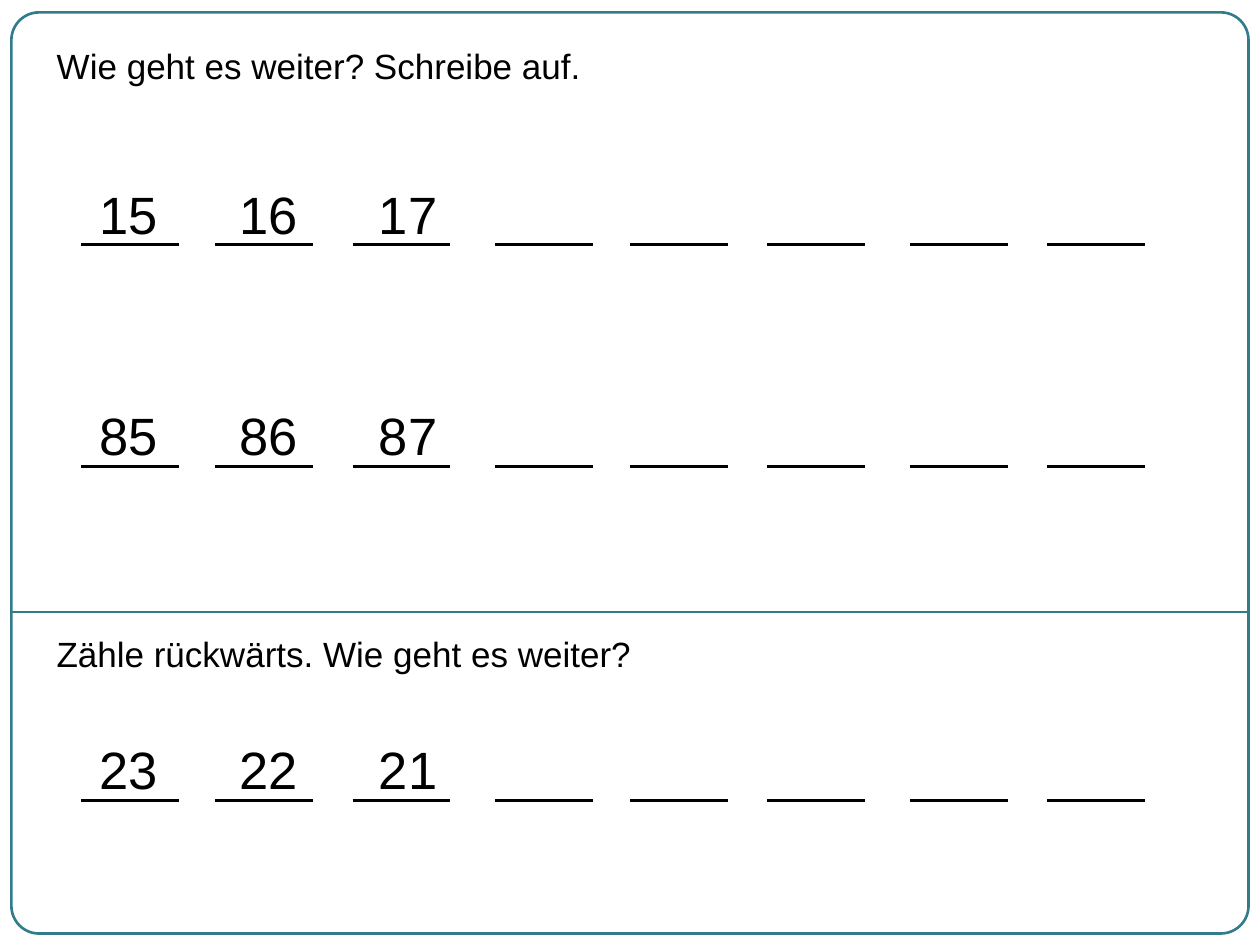
from collections import namedtuple

from pptx import Presentation, util as u
from pptx.dml.color import RGBColor
from pptx.enum import shapes, text
from pptx.oxml.ns import qn
from lxml import etree

TEAL = RGBColor(0x32, 0x7B, 0x8A)
BLACK = RGBColor(0, 0, 0)

# Lengths in centimetres
Box = namedtuple("Box", "left top width height")
FRAME = Box(0.23, 0.25, 24.94, 18.57)
DIVIDER_TOP = 12.34
BLANK_LEFTS = (1.4, 4.11, 6.88, 9.75, 12.47, 15.24, 18.11, 20.88)
BLANK_WIDTH = 1.97
NUMBER_LEFT, NUMBER_STEP, NUMBER_RISE = 1.52, 2.82, 1.39


def place(shape, box):
    for name, value in box._asdict().items():
        setattr(shape, name, u.Cm(value))


def write(shape, words, size):
    frame = shape.text_frame
    layout = {"word_wrap": True, "vertical_anchor": text.MSO_ANCHOR.TOP,
              "auto_size": text.MSO_AUTO_SIZE.SHAPE_TO_FIT_TEXT}
    for name, value in layout.items():
        setattr(frame, name, value)
    para = frame.paragraphs[0]
    para.alignment = text.PP_ALIGN.LEFT
    span = para.add_run()
    span.text = words
    for name, value in {"name": "Arial", "size": u.Pt(size)}.items():
        setattr(span.font, name, value)
    span.font.color.rgb = BLACK


def add_words(page, box, words, size):
    shape = page.shapes.add_textbox(0, 0, 0, 0)
    place(shape, box)
    write(shape, words, size)


def add_rule(page, left, top, width, color, weight):
    rule = page.shapes.add_connector(
        shapes.MSO_CONNECTOR.STRAIGHT,
        u.Cm(left), u.Cm(top), u.Cm(left + width), u.Cm(top))
    rule.line.color.rgb = color
    rule.line.width = u.Pt(weight)
    etree.SubElement(rule._element.spPr, qn("a:effectLst"))


def add_frame(page, box):
    outline = page.shapes.add_shape(shapes.MSO_SHAPE.ROUNDED_RECTANGLE, 0, 0, 0, 0)
    place(outline, box)
    outline.adjustments[0] = 0.03
    outline.fill.background()
    outline.line.color.rgb = TEAL
    outline.line.width = u.Pt(1.5)
    outline.shadow.inherit = False
    add_rule(page, box.left, DIVIDER_TOP, box.width, TEAL, 1.5)


def add_exercise(page, box, heading, heading_top, rows, title=None):
    """Heading and number rows; rows pairs a line offset with its given numbers."""
    heading_box = Box(box.left + 0.66, box.top + heading_top, 17.17, 1.12)
    if title is None:
        add_words(page, heading_box, heading, 20)
    else:
        place(title, heading_box)
        write(title, heading, 20)

    for offset, numbers in rows:
        line_top = box.top + offset
        # Given numbers
        for index, number in enumerate(numbers):
            left = box.left + NUMBER_LEFT + index * NUMBER_STEP
            add_words(page, Box(left, line_top - NUMBER_RISE, 1.98, 1.55), str(number), 30)
        # Writing lines
        for left in BLANK_LEFTS:
            add_rule(page, box.left + left, line_top, BLANK_WIDTH, BLACK, 1.75)


def main():
    deck = Presentation()
    deck.slide_width, deck.slide_height = u.Cm(25.4), u.Cm(19.05)
    page = deck.slides.add_slide(deck.slide_layouts.get_by_name("Title Only"))

    add_frame(page, FRAME)

    # Counting forwards
    upper = FRAME._replace(height=DIVIDER_TOP - FRAME.top)
    add_exercise(page, upper, "Wie geht es weiter? Schreibe auf.", 0.51,
                 [(4.68, (15, 16, 17)), (9.15, (85, 86, 87))], page.shapes.title)

    # Counting backwards
    lower = FRAME._replace(top=DIVIDER_TOP, height=FRAME.height - upper.height)
    add_exercise(page, lower, "Zähle rückwärts. Wie geht es weiter?", 0.28,
                 [(3.79, (23, 22, 21))])

    deck.save("out.pptx")


if __name__ == "__main__":
    main()
